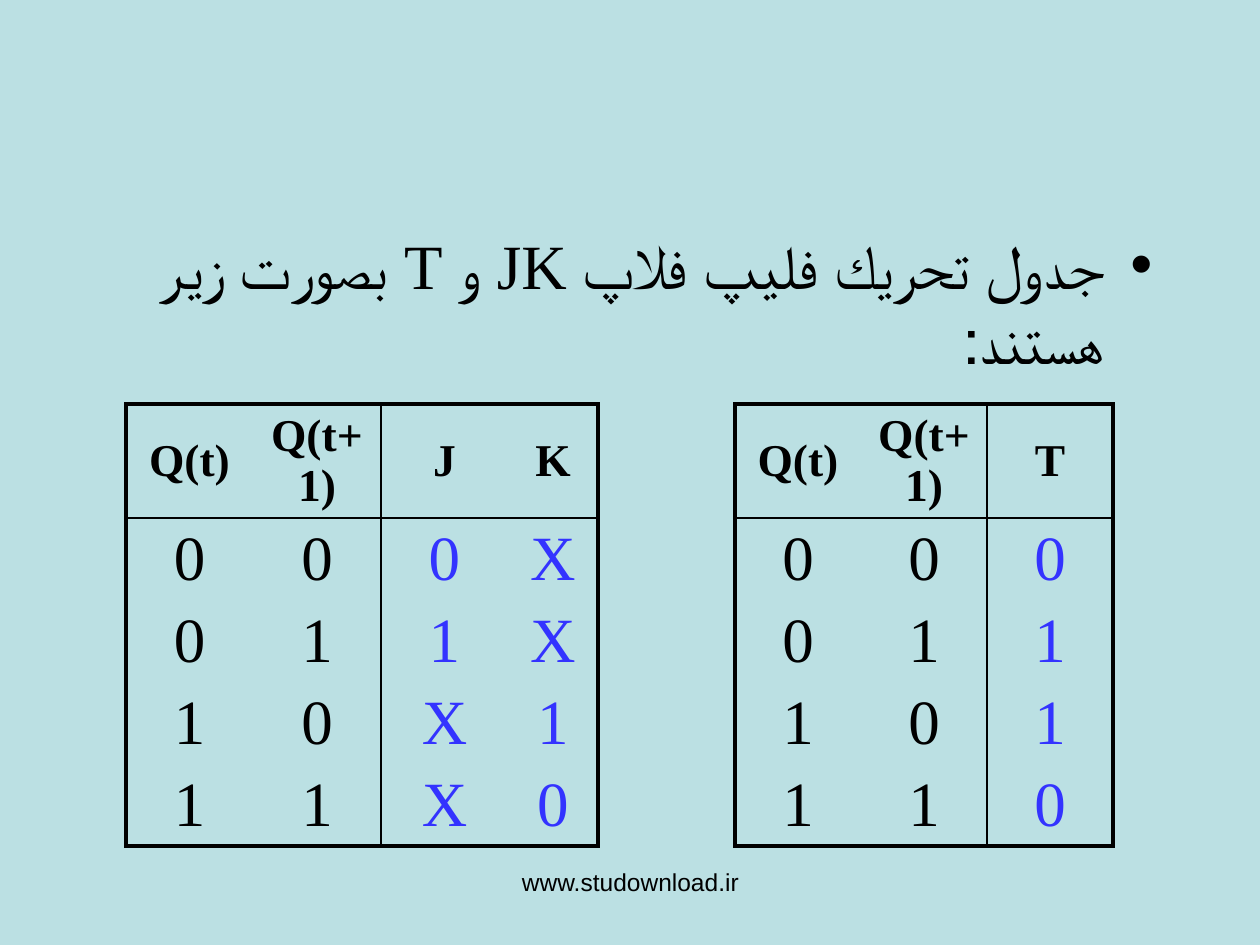
from lxml import etree
from pptx import Presentation, util as u
from pptx.dml.color import RGBColor
from pptx.enum import text
from pptx.oxml import ns

STATEMENT = "جدول تحريك فليپ فلاپ JK و T بصورت زير هستند:"
SITE = "www.studownload.ir"
EXCITATIONS = [
    {"left": 735, "columns": [126, 126, 126], "rows": [
        ["Q(t)", "Q(t+1)", "T"],
        ["0", "0", "0"],
        ["0", "1", "1"],
        ["1", "0", "1"],
        ["1", "1", "0"]]},
    {"left": 126, "columns": [127, 128, 127, 90], "rows": [
        ["Q(t)", "Q(t+1)", "J", "K"],
        ["0", "0", "0", "X"],
        ["0", "1", "1", "X"],
        ["1", "0", "X", "1"],
        ["1", "1", "X", "0"]]},
]
STATES = 2
TABLE_TOP, HEADER_HEIGHT, ROW_HEIGHT = 404, 114, 82
OUTER, INNER = 2.25, 1
SERIF, SANS = "Times New Roman", "Arial"
PLAIN_STYLE = "{2D5ABB26-0587-4C30-8999-92F81FD0307C}"
BACKGROUND = RGBColor(0xBB, 0xE0, 0xE3)
BLACK = RGBColor(0, 0, 0)
BLUE = RGBColor(0x33, 0x33, 0xFF)


def px(count):
    return u.Emu(count * u.Inches(1) // 126)


def style(paragraph, face, size, color, align, bold=False):
    paragraph.alignment = align
    paragraph.space_before = u.Pt(0)
    for run in paragraph.runs:
        run.font.name, run.font.size, run.font.bold = face, u.Pt(size), bold
        run.font.color.rgb = color


def border(cell, side, width):
    line = etree.SubElement(cell._tc.get_or_add_tcPr(), ns.qn("a:ln" + side))
    if not width:
        etree.SubElement(line, ns.qn("a:noFill"))
        return
    line.set("w", str(u.Pt(width)))
    fill = etree.SubElement(line, ns.qn("a:solidFill"))
    etree.SubElement(fill, ns.qn("a:srgbClr")).set("val", str(BLACK))


def rule(index, count, divider):
    if index in (0, count):
        return OUTER
    return INNER if index == divider else 0


def add_excitation(slide, left, columns, rows):
    heights = [HEADER_HEIGHT] + [ROW_HEIGHT] * (len(rows) - 1)
    grid = slide.shapes.add_table(
        len(rows), len(columns), px(left), px(TABLE_TOP),
        px(sum(columns)), px(sum(heights))).table
    grid.horz_banding = False
    grid._tbl.tblPr.find(ns.qn("a:tableStyleId")).text = PLAIN_STYLE
    for column, width in zip(grid.columns, columns):
        column.width = px(width)
    for r, values in enumerate(rows):
        grid.rows[r].height = px(heights[r])
        for c, value in enumerate(values):
            cell = grid.cell(r, c)
            cell.text_frame.text = value
            cell.vertical_anchor = text.MSO_ANCHOR.MIDDLE
            cell.margin_left = cell.margin_right = u.Inches(0.1)
            cell.margin_top = cell.margin_bottom = px(5)
            header = r == 0
            style(cell.text_frame.paragraphs[0], SERIF, 26 if header else 36,
                  BLACK if header or c < STATES else BLUE,
                  text.PP_ALIGN.CENTER, header)
            border(cell, "L", rule(c, len(columns), STATES))
            border(cell, "R", rule(c + 1, len(columns), STATES))
            border(cell, "T", rule(r, len(rows), 1))
            border(cell, "B", rule(r + 1, len(rows), 1))
            cell.fill.background()


def main():
    deck = Presentation()
    deck.slide_width, deck.slide_height = px(1260), px(945)
    slide = deck.slides.add_slide(deck.slide_layouts[1])
    slide.background.fill.solid()
    slide.background.fill.fore_color.rgb = BACKGROUND
    title, statement = slide.placeholders
    title._element.getparent().remove(title._element)

    statement.left, statement.top = px(63), px(220)
    statement.width, statement.height = px(1102), px(624)
    statement.text_frame.text = STATEMENT
    statement.text_frame.auto_size = text.MSO_AUTO_SIZE.NONE
    sentence = statement.text_frame.paragraphs[0]
    layout = sentence._p.get_or_add_pPr()
    for name, value in (("marL", px(48)), ("indent", -px(48)), ("rtl", 1)):
        layout.set(name, str(value))
    style(sentence, SERIF, 36, BLACK, text.PP_ALIGN.RIGHT)

    for excitation in EXCITATIONS:
        add_excitation(slide, **excitation)

    site = slide.shapes.add_textbox(px(431), px(861), px(399), px(65))
    site.text_frame.word_wrap = True
    site.text_frame.text = SITE
    style(site.text_frame.paragraphs[0], SANS, 14, BLACK, text.PP_ALIGN.CENTER)
    deck.save("out.pptx")


if __name__ == "__main__":
    main()
